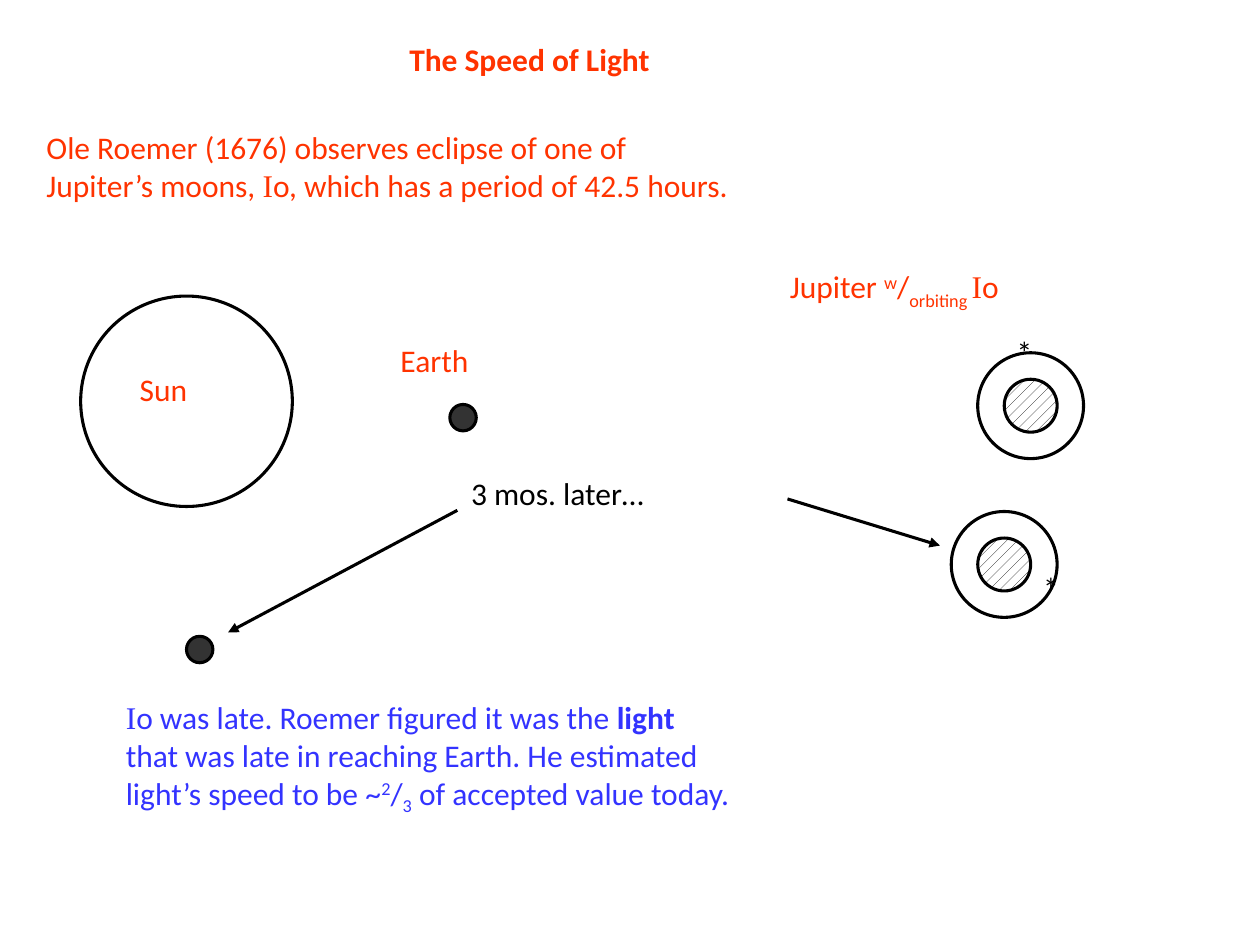
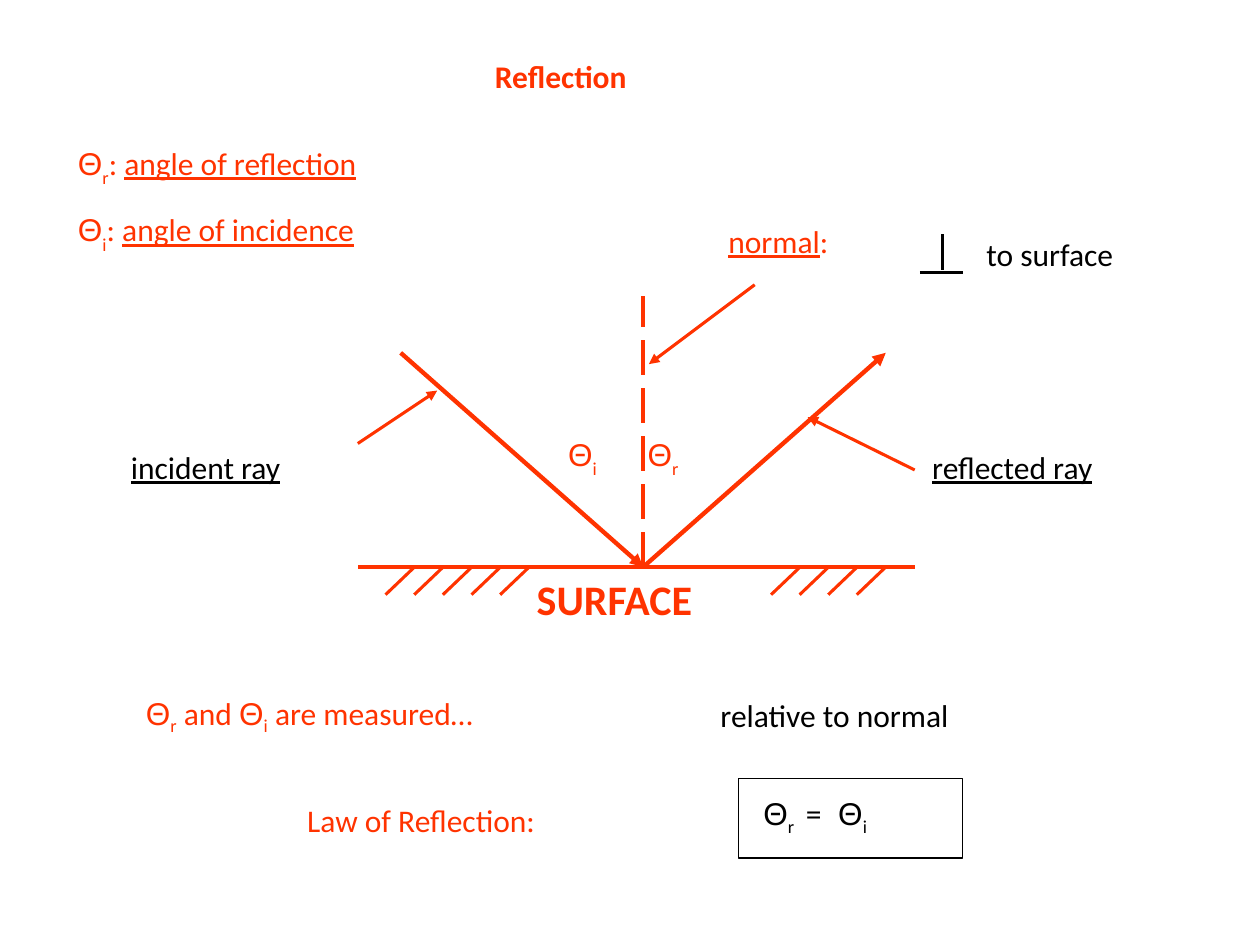
from collections import namedtuple
from dataclasses import dataclass

from lxml import etree
from pptx import Presentation
from pptx.dml.color import RGBColor
from pptx.enum.dml import MSO_LINE, MSO_PATTERN
from pptx.enum.shapes import MSO_CONNECTOR, MSO_SHAPE
from pptx.enum.text import MSO_ANCHOR
from pptx.oxml.ns import qn
from pptx.util import Inches, Pt

TOP, MIDDLE = MSO_ANCHOR.TOP, MSO_ANCHOR.MIDDLE
OVAL, RECTANGLE = MSO_SHAPE.OVAL, MSO_SHAPE.RECTANGLE
STRAIGHT = MSO_CONNECTOR.STRAIGHT
LONG_DASH = MSO_LINE.LONG_DASH
DOTS = MSO_PATTERN.PERCENT_20
BLANK = 6


@dataclass(frozen=True)
class Theme:
    red: RGBColor = RGBColor(0xFF, 0x33, 0x00)
    blue: RGBColor = RGBColor(0x33, 0x33, 0xFF)
    black: RGBColor = RGBColor(0, 0, 0)
    white: RGBColor = RGBColor(0xFF, 0xFF, 0xFF)
    earth: RGBColor = RGBColor(0x33, 0x33, 0x33)
    body: str = "Calibri"
    serif: str = "Times New Roman"
    greek: str = "Arial"
    size: float = 18
    large: float = 24
    frame: float = 0.75
    thin: float = 1.75
    ray: float = 2.5


THEME = Theme()
Span = namedtuple("Span", "text font base bold underline spacing",
                  defaults=(THEME.body, 0, False, False, 0))


@dataclass(frozen=True)
class Box:
    left: float
    top: float
    width: float = 0
    height: float = 0

    def inner(self, left, top, width, height):
        """Box placed relative to this one."""
        return Box(self.left + left, self.top + top, width, height)

    def point(self, x, y):
        return self.left + x, self.top + y

    def lengths(self):
        return [Inches(v) for v in (self.left, self.top, self.width, self.height)]


# Words used on both slides
IO_INITIAL = Span("I", THEME.serif)


def theta(letter, base=-25):
    return [Span("Θ", THEME.greek), Span(letter, base=base)]


# Shared drawing helpers
def add_text(page, box, *paras, color=THEME.red, size=THEME.size,
             anchor=TOP, indent=0.0):
    """Each paragraph is a plain string or a list of spans."""
    frame = page.shapes.add_textbox(*box.lengths()).text_frame
    frame.word_wrap = True
    frame.vertical_anchor = anchor
    frame.margin_left = Inches(0.1 + indent)
    for number, spans in enumerate(paras):
        para = frame.add_paragraph() if number else frame.paragraphs[0]
        for span in [Span(spans)] if isinstance(spans, str) else spans:
            run = para.add_run()
            run.text = span.text
            run.font.name = span.font
            run.font.size = Pt(size)
            run.font.bold = span.bold
            run.font.underline = span.underline
            run.font.color.rgb = color
            properties = run._r.get_or_add_rPr()
            if span.base:
                properties.set("baseline", str(span.base * 1000))
            if span.spacing:
                properties.set("spc", str(span.spacing))


def add_title(page, box, title):
    add_text(page, box, [Span(title, bold=True)], anchor=MIDDLE)


def add_outline(page, kind, box, weight=THEME.thin, fill=None):
    shape = page.shapes.add_shape(kind, *box.lengths())
    shape.shadow.inherit = False
    shape.line.color.rgb = THEME.black
    shape.line.width = Pt(weight)
    if fill is None:
        shape.fill.background()
    else:
        shape.fill.solid()
        shape.fill.fore_color.rgb = fill
    return shape


def add_line(page, start, end, color=THEME.red, weight=THEME.thin,
             arrow=False, dash=None):
    line = page.shapes.add_connector(
        STRAIGHT, *[Inches(v) for v in (*start, *end)])
    line.line.color.rgb = color
    line.line.width = Pt(weight)
    if dash is not None:
        line.line.dash_style = dash
    if arrow:
        outline = line.line._get_or_add_ln()
        etree.SubElement(outline, qn("a:tailEnd"), type="triangle")
    etree.SubElement(line._element.spPr, qn("a:effectLst"))


# Slide 1: the speed of light
def add_earth(page, box):
    add_outline(page, OVAL, box.inner(0, 0, 0.21, 0.21), fill=THEME.earth)


def add_jupiter(page, box, moon):
    """Hatched planet, the orbit around it and Io as an asterisk."""
    planet = add_outline(page, OVAL, box.inner(0.21, 0.21, 0.42, 0.42))
    planet.fill.patterned()
    planet.fill.pattern = DOTS
    planet.fill.fore_color.rgb = THEME.black
    planet.fill.back_color.rgb = THEME.white
    add_outline(page, OVAL, box)
    add_text(page, box.inner(*moon, 0.42, 0.63), "*", color=THEME.black)


def add_first_sighting(page, box):
    add_outline(page, OVAL, box.inner(0, 0.28, 1.68, 1.67))
    add_earth(page, box.inner(2.93, 1.14, 0, 0))
    add_text(page, box.inner(2.44, 0.59, 1.31, 0.63), "Earth")
    add_text(page, box.inner(0.37, 0.82, 1, 0.63), "Sun")
    add_text(page, box.inner(5.53, 0, 3.2, 0.63),
             [Span("Jupiter "), Span("w", base=30), Span("/"),
              Span("orbiting ", base=-30), IO_INITIAL, Span("o")])
    add_jupiter(page, box.inner(7.12, 0.73, 0.84, 0.84), moon=(0.21, -0.21))


def add_later_sighting(page, box):
    add_earth(page, box.inner(0, 1.42, 0, 0))
    add_jupiter(page, box.inner(6.07, 0.43, 0.84, 0.84), moon=(0.63, 0.41))
    add_text(page, box.inner(2.16, 0, 2.73, 0.57), "3 mos. later…",
             color=THEME.black, anchor=MIDDLE)
    for start, end in [((2.15, 0.42), (0.33, 1.39)), ((4.77, 0.33), (5.98, 0.7))]:
        add_line(page, box.point(*start), box.point(*end), THEME.black, arrow=True)


def build_speed_of_light(page):
    add_title(page, Box(3.15, 0.18, 3.7, 0.57), "The Speed of Light")
    add_text(page, Box(0.27, 0.8, 9.45, 1.03),
             "Ole Roemer (1676) observes eclipse of one of",
             [Span("Jupiter’s moons, "), IO_INITIAL,
              Span("o, which has a period of 42.5 hours.")], anchor=MIDDLE)
    add_first_sighting(page, Box(0.64, 2.07))
    add_later_sighting(page, Box(1.48, 3.63))
    # Conclusion
    add_text(page, Box(0.9, 5.49, 8.41, 1.5),
             [IO_INITIAL, Span("o was late. Roemer figured it was the "),
              Span("light", bold=True)],
             "that was late in reaching Earth. He estimated",
             [Span("light’s speed to be ~"), Span("2", base=30), Span("/"),
              Span("3", base=-25), Span(" of accepted value today.")],
             color=THEME.blue)


# Slide 2: reflection
def add_surface(page, box):
    """Mirror line with hatch strokes below it at both ends."""
    for first, last, count in [(0.45, 1.36, 5), (3.51, 4.19, 4)]:
        step = (last - first) / (count - 1)
        for number in range(count):
            x = first + number * step
            add_line(page, box.point(x, 0), box.point(x - 0.23, 0.22))
    add_line(page, box.point(box.width, 0), box.point(0, 0))
    add_text(page, box.inner(1.17, 0, 2.13, 0.45), [Span("SURFACE", bold=True)],
             size=THEME.large, indent=0.15)


def add_rays(page, box):
    """Normal, reflected and incident ray, meeting at the foot of the box."""
    middle, space = box.width / 2, 0.11
    foot = box.point(middle, box.height)
    add_line(page, foot, box.point(middle, 0), weight=THEME.ray, dash=LONG_DASH)
    add_line(page, foot, box.point(box.width, 0.45), weight=THEME.ray, arrow=True)
    add_line(page, box.point(0, 0.45), foot, weight=THEME.ray, arrow=True)
    for left, letter in [(1.75, "r"), (1.12, "i")]:
        add_text(page, box.inner(left, 1.05, 1.05, 0.63), theta(letter, -30),
                 indent=space)
    # Pointers to the incident ray, the reflected ray and the normal
    for start, end in [((-0.34, 1.17), (0.29, 0.75)),
                       ((4.08, 1.38), (3.23, 0.96)),
                       ((2.81, -0.09), (1.97, 0.54))]:
        add_line(page, box.point(*start), box.point(*end), arrow=True)
    add_text(page, box.inner(2.39, -0.64, 2.52, 0.63),
             [Span("normal", underline=True), Span(":")], indent=space)
    for left, width, name in [(-2.24, 2.19, "incident ray"),
                              (4.12, 2.35, "reflected ray")]:
        add_text(page, box.inner(left, 1.07, width, 0.57),
                 [Span(name, underline=True)], color=THEME.black, anchor=MIDDLE)


def add_perpendicular(page, box):
    add_text(page, box.inner(0.43, 0, 2.02, 0.57), "to surface",
             color=THEME.black, anchor=MIDDLE)
    add_line(page, box.point(0, 0.43), box.point(0.34, 0.43), THEME.black)
    add_line(page, box.point(0.18, 0.41), box.point(0.18, 0.13), THEME.black)


def add_law(page, box):
    add_text(page, box.inner(0, 0, 4.8, 0.57),
             [*theta("r"), Span(" and "), *theta("i"), Span(" are measured…")],
             anchor=MIDDLE)
    add_text(page, box.inner(4.56, 0, 3.3, 0.57), "relative to normal",
             color=THEME.black, anchor=MIDDLE)
    add_text(page, box.inner(1.28, 0.83, 3.4, 0.57), "Law of Reflection:",
             anchor=MIDDLE)
    add_outline(page, RECTANGLE, box.inner(4.8, 0.79, 1.78, 0.63), THEME.frame)
    add_text(page, box.inner(4.9, 0.8, 1.69, 0.57),
             [*theta("r"), Span(" = ", spacing=270), *theta("i")],
             color=THEME.black, anchor=MIDDLE)


def build_reflection(page):
    add_title(page, Box(3.83, 0.32, 2.09, 0.57), "Reflection")
    # Definitions
    for top, letter, name in [(1.09, "r", "reflection"), (1.62, "i", "incidence")]:
        add_text(page, Box(0.52, top, 4.09, 0.63),
                 [*theta(letter, -30), Span(": "),
                  Span(f"angle of {name}", underline=True)])
    add_surface(page, Box(2.84, 4.5, 4.42, 0.45))
    add_rays(page, Box(3.18, 2.35, 3.85, 2.15))
    add_perpendicular(page, Box(7.3, 1.73))
    add_law(page, Box(1.06, 5.39))


def main():
    deck = Presentation()
    deck.slide_width, deck.slide_height = Inches(10), Inches(7.5)
    for build in (build_speed_of_light, build_reflection):
        build(deck.slides.add_slide(deck.slide_layouts[BLANK]))
    deck.save("out.pptx")


if __name__ == "__main__":
    main()
